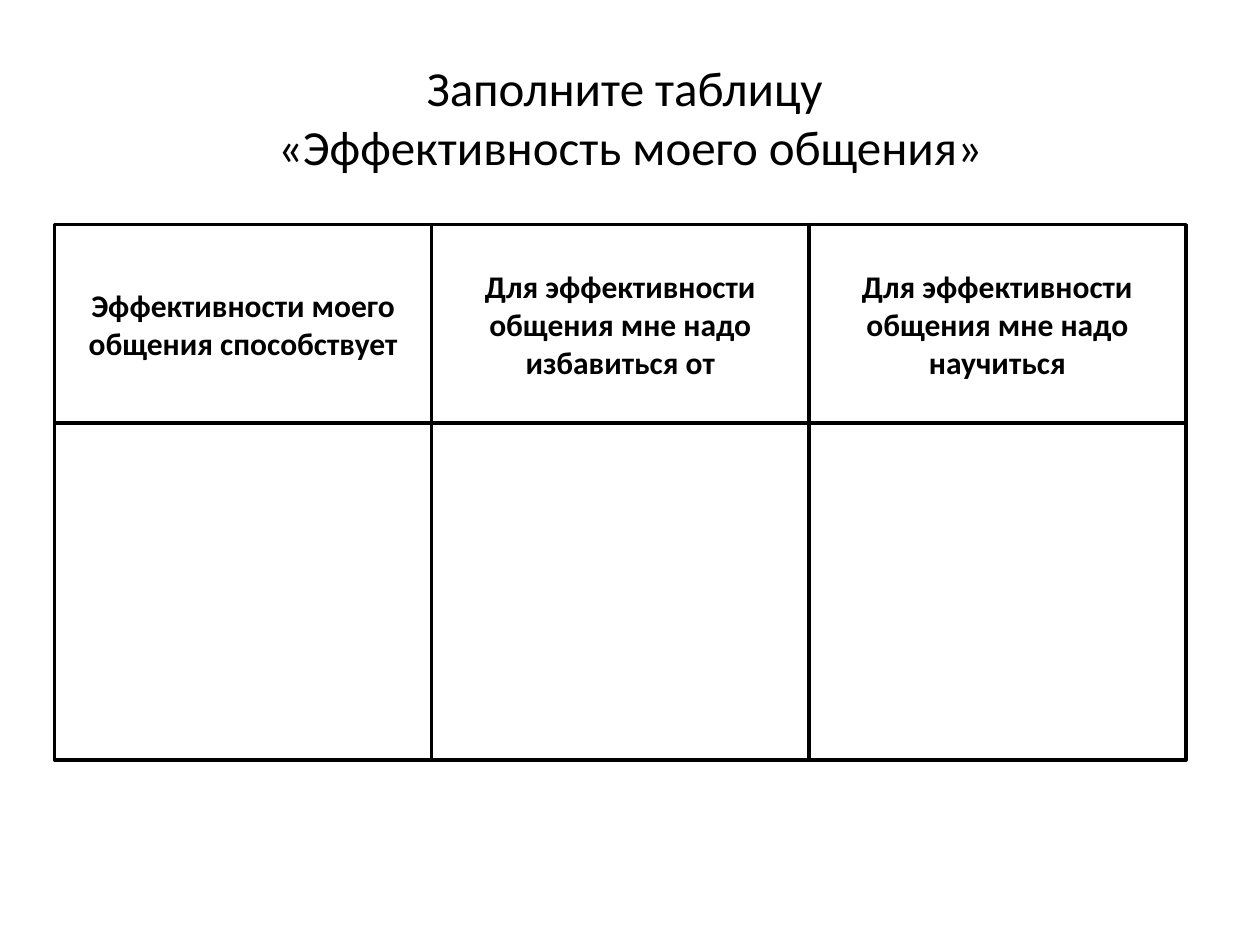
import enum

import pptx
import pptx.dml.color
import pptx.enum.shapes
import pptx.enum.text
import pptx.util

Pt = pptx.util.Pt


class Theme(enum.Enum):
    FONT = "Calibri"
    INK = pptx.dml.color.RGBColor(0, 0, 0)
    PAPER = pptx.dml.color.RGBColor(255, 255, 255)
    TITLE_SIZE = Pt(28)
    HEADING_SIZE = Pt(18)
    BORDER = Pt(2)


def write_centred(shape, text, size, bold=False):
    frame = shape.text_frame
    frame.text = text
    frame.word_wrap = True
    frame.vertical_anchor = pptx.enum.text.MSO_ANCHOR.MIDDLE
    for para in frame.paragraphs:
        para.alignment = pptx.enum.text.PP_ALIGN.CENTER
        for span in para.runs:
            span.font.name = Theme.FONT.value
            span.font.size = size.value
            span.font.bold = bold
            span.font.color.rgb = Theme.INK.value


deck = pptx.Presentation()
deck.slide_width, deck.slide_height = Pt(720), Pt(540)
slide = deck.slides.add_slide(deck.slide_layouts[6])

title = slide.shapes.add_textbox(Pt(36), Pt(21.6), Pt(648), Pt(90))
# A vertical tab is a line break within the paragraph.
write_centred(title, "Заполните таблицу \v«Эффективность моего общения»", Theme.TITLE_SIZE)

headings = [
    "Эффективности моего общения способствует",
    "Для эффективности общения мне надо избавиться от",
    "Для эффективности общения мне надо научиться",
]
grid_left, grid_top = 31.2, 128.4
column_width = 215.5
heading_height, answer_height = 113.2, 192.8
rows = [
    (grid_top, heading_height, headings),
    (grid_top + heading_height, answer_height, [""] * len(headings)),
]

for top, height, texts in rows:
    for column, text in enumerate(texts):
        box = slide.shapes.add_shape(
            pptx.enum.shapes.MSO_SHAPE.RECTANGLE,
            Pt(grid_left + column * column_width), Pt(top), Pt(column_width), Pt(height),
        )
        box.shadow.inherit = False
        box.fill.solid()
        box.fill.fore_color.rgb = Theme.PAPER.value
        box.line.color.rgb = Theme.INK.value
        box.line.width = Theme.BORDER.value
        write_centred(box, text, Theme.HEADING_SIZE, bold=True)

deck.save("out.pptx")
